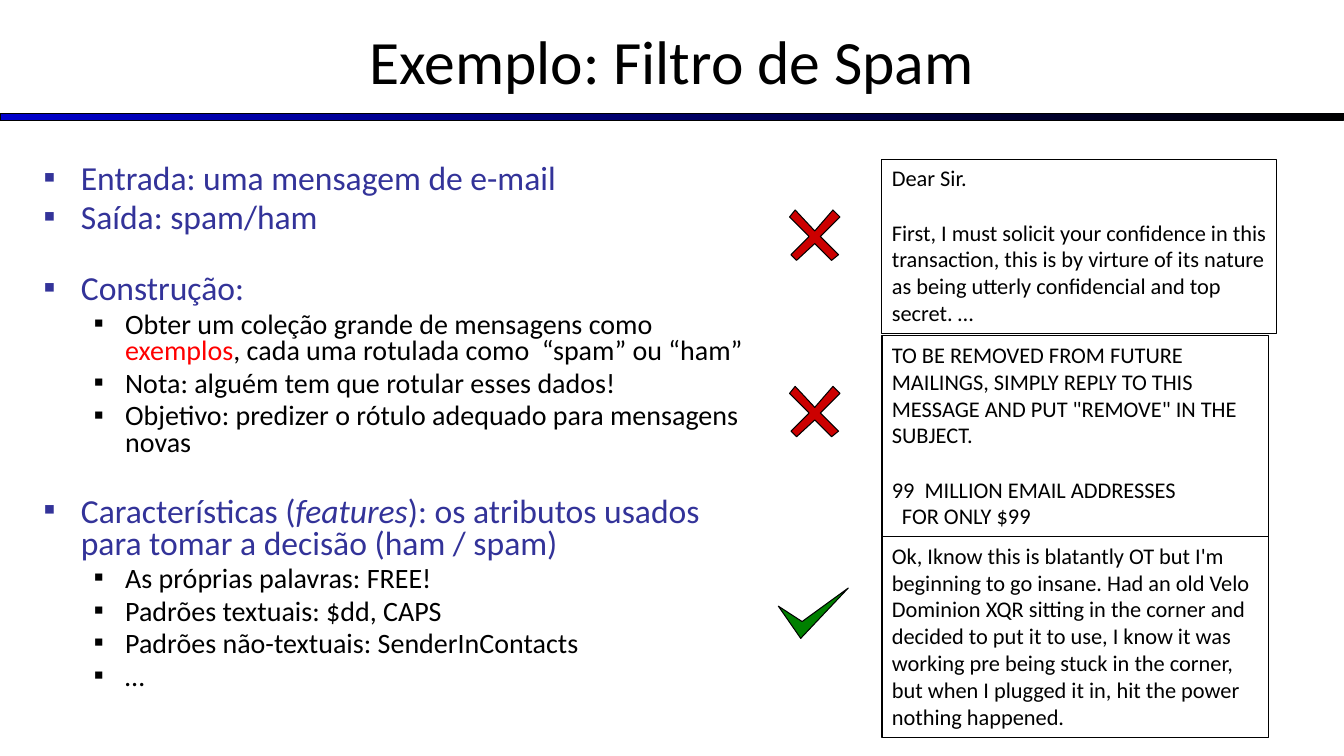
from lxml.etree import SubElement
from pptx import Presentation
from pptx.dml.color import RGBColor
from pptx.enum.shapes import MSO_SHAPE as SHAPE
from pptx.enum.text import MSO_ANCHOR as ANCHOR, PP_ALIGN as ALIGN
from pptx.oxml.ns import qn
from pptx.util import Pt

BLACK = RGBColor(0x00, 0x00, 0x00)
BLUE = RGBColor(0x00, 0x00, 0xCC)
INDIGO = RGBColor(0x33, 0x33, 0x99)
RED = RGBColor(0xFF, 0x00, 0x00)
CROSS_RED = RGBColor(0xCC, 0x00, 0x00)
CHECK_GREEN = RGBColor(0x00, 0x80, 0x00)

TITLE = {"name": "Calibri", "size": Pt(44), "color": BLACK}
TOPIC = {"name": "Calibri", "size": Pt(24), "color": INDIGO}
DETAIL = {"name": "Calibri", "size": Pt(20), "color": BLACK}
EMAIL = {"name": "Calibri", "size": Pt(16), "color": BLACK}
LEVELS = [(TOPIC, 26.64, -26.64), (DETAIL, 58.32, -22.32)]

BULLETS = [
    (0, 0, [("Entrada: uma mensagem de e-mail", {})]),
    (0, 0, [("Saída: spam/ham", {})]),
    (0, 23, [("Construção:", {})]),
    (1, 0, [("Obter um coleção grande de mensagens como ", {}),
            ("exemplos", {"color": RED}),
            (", cada uma rotulada como  “spam” ou “ham”", {})]),
    (1, 0, [("Nota: alguém tem que rotular esses dados!", {})]),
    (1, 0, [("Objetivo: predizer o rótulo adequado para mensagens novas", {})]),
    (0, 23, [("Características (", {}), ("features", {"italic": True}),
             ("): os atributos usados para tomar a decisão (ham / spam)", {})]),
    (1, 0, [("As próprias palavras: FREE!", {})]),
    (1, 0, [("Padrões textuais: $dd, CAPS", {})]),
    (1, 0, [("Padrões não-textuais: SenderInContacts", {})]),
    (1, 0, [("…", {})]),
]

CROSS = [(0, 5), (14, 19), (1, 32), (5, 36), (18, 24), (30, 36),
         (35, 32), (22, 19), (36, 5), (31, 0), (18, 15), (4, 0)]
CHECK = [(16, 36), (50, 0), (17, 24), (0, 13)]

EMAILS = [
    ((630, 114, 282, 124), [
        ("Dear Sir.", 0, 0),
        ("First, I must solicit your confidence in this transaction, this is by "
         "virture of its nature as being utterly confidencial and top secret. …",
         19.5, 0)]),
    ((630, 240, 276, 143.5), [
        ("TO BE REMOVED FROM FUTURE MAILINGS, SIMPLY REPLY TO THIS MESSAGE "
         'AND PUT "REMOVE" IN THE SUBJECT.', 0, 0),
        ("99  MILLION EMAIL ADDRESSES", 19.5, 0),
        ("FOR ONLY $99", 0, 7.2)]),
    ((630, 383.5, 276, 143.5), [
        ("Ok, Iknow this is blatantly OT but I'm beginning to go insane. Had an "
         "old Velo Dominion XQR sitting in the corner and decided to put it to "
         "use, I know it was working pre being stuck in the corner, but when I "
         "plugged it in, hit the power nothing happened.", 0, 0)]),
]
MARKS = [(564, 150, CROSS, CROSS_RED), (564, 276, CROSS, CROSS_RED),
         (556, 420, CHECK, CHECK_GREEN)]


def add_run(p, text, fmt):
    r = p.add_run()
    r.text = text
    for key, value in fmt.items():
        if key == "color":
            r.font.color.rgb = value
        else:
            setattr(r.font, key, value)


def set_indent(p, left, first=0):
    pPr = p._p.get_or_add_pPr()
    pPr.set("marL", str(Pt(left)))
    pPr.set("indent", str(Pt(first)))
    return pPr


def paragraphs(tf, items):
    for i, item in enumerate(items):
        yield tf.paragraphs[0] if i == 0 else tf.add_paragraph(), item


def outline(sp):
    sp.shadow.inherit = False
    sp.line.color.rgb = BLACK
    sp.line.width = Pt(0.75)


def add_header(slide, x, y, w, h):
    bar = slide.shapes.add_shape(SHAPE.RECTANGLE, Pt(x), Pt(y + 83), Pt(w), Pt(5))
    outline(bar)
    bar.fill.gradient()
    bar.fill.gradient_angle = 0
    for stop, position, color in zip(bar.fill.gradient_stops, (0, 1), (BLUE, BLACK)):
        stop.position = position
        stop.color.rgb = color
    tf = slide.shapes.add_textbox(Pt(x), Pt(y), Pt(w), Pt(h)).text_frame
    tf.word_wrap = True
    tf.vertical_anchor = ANCHOR.MIDDLE
    p = tf.paragraphs[0]
    p.alignment = ALIGN.CENTER
    add_run(p, "Exemplo: Filtro de Spam", TITLE)


def add_bullets(slide, x, y, w, h):
    tf = slide.shapes.add_textbox(Pt(x), Pt(y), Pt(w), Pt(h)).text_frame
    tf.word_wrap = True
    for p, (level, gap, runs) in paragraphs(tf, BULLETS):
        fmt, left, first = LEVELS[level]
        p.level = level
        p.line_spacing = 0.8
        p.space_before = Pt(fmt["size"].pt * 0.2 + gap)
        pPr = set_indent(p, left, first)
        color = SubElement(pPr, qn("a:buClr"))
        SubElement(color, qn("a:srgbClr"), val=str(fmt["color"]))
        SubElement(pPr, qn("a:buFont"), typeface="Calibri")
        SubElement(pPr, qn("a:buChar"), char="▪")
        for text, extra in runs:
            add_run(p, text, {**fmt, **extra})


def add_email(slide, x, y, w, h, lines):
    sp = slide.shapes.add_shape(SHAPE.RECTANGLE, Pt(x), Pt(y), Pt(w), Pt(h))
    outline(sp)
    sp.fill.background()
    tf = sp.text_frame
    tf.word_wrap = True
    tf.vertical_anchor = ANCHOR.TOP
    for p, (text, gap, left) in paragraphs(tf, lines):
        p.alignment = ALIGN.LEFT
        p.space_before = Pt(gap)
        set_indent(p, left)
        add_run(p, text, EMAIL)


def add_mark(slide, x, y, points, color):
    corners = [(Pt(x + dx), Pt(y + dy)) for dx, dy in points]
    builder = slide.shapes.build_freeform(*corners[0])
    builder.add_line_segments(corners[1:], close=True)
    sp = builder.convert_to_shape()
    outline(sp)
    sp.fill.solid()
    sp.fill.fore_color.rgb = color


def main():
    prs = Presentation()
    prs.slide_width, prs.slide_height = Pt(960), Pt(540)
    slide = prs.slides.add_slide(prs.slide_layouts[6])
    add_header(slide, 0, -2, 960, 90)
    add_bullets(slide, 24, 114, 516, 396)
    for box, lines in EMAILS:
        add_email(slide, *box, lines)
    for mark in MARKS:
        add_mark(slide, *mark)
    prs.save("out.pptx")


if __name__ == "__main__":
    main()
